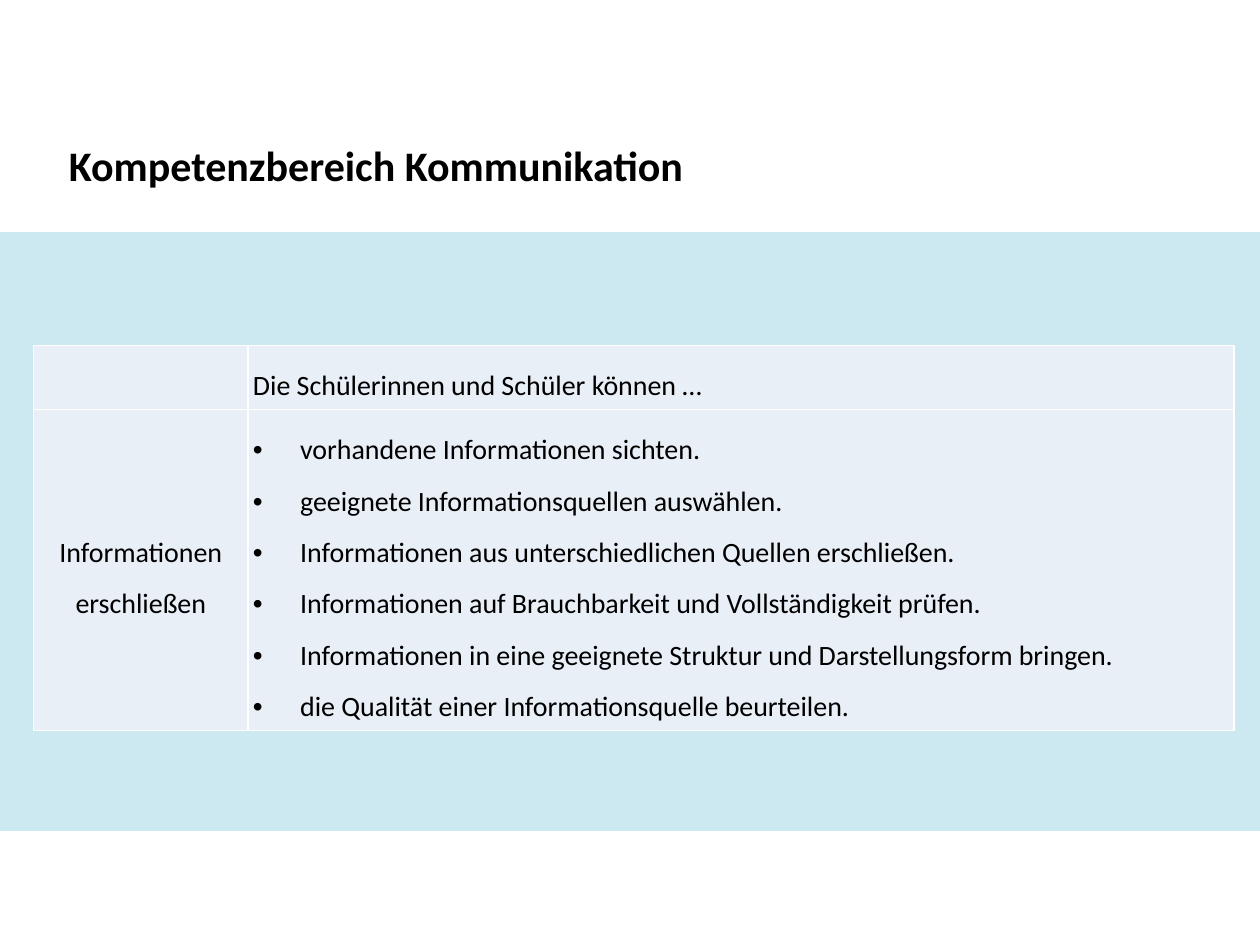
import pptx
import pptx.util
import pptx.dml.color
import pptx.enum.shapes
import pptx.enum.text
import pptx.oxml
import pptx.oxml.ns
from lxml import etree

Cm, Pt = pptx.util.Cm, pptx.util.Pt
RGB = pptx.dml.color.RGBColor.from_string
qn = pptx.oxml.ns.qn
MID = pptx.enum.text.MSO_ANCHOR.MIDDLE
COLORS = {"band": "CCE9F2", "cell": "E9EFF7", "line": "FFFFFF", "text": "000000"}


def add(parent, tag, **attrs):
    return etree.SubElement(parent, qn(tag), attrs)


def style(para, size, bold=False):
    font = para.font
    font.name, font.size, font.bold = "Calibri", Pt(size), bold
    font.color.rgb = RGB(COLORS["text"])


deck = pptx.Presentation()
deck.slide_width, deck.slide_height = Cm(25.4), Cm(19.05)
slide = deck.slides.add_slide(deck.slide_layouts[6])

# Background band
band = slide.shapes.add_shape(pptx.enum.shapes.MSO_SHAPE.RECTANGLE,
                              Cm(0), Cm(4.68), Cm(25.4), Cm(12.07))
band.shadow.inherit = False
band.fill.solid()
band.fill.fore_color.rgb = RGB(COLORS["band"])
band.line.fill.background()

# Table grid
frame = slide.shapes.add_table(2, 2, Cm(0.68), Cm(6.96), Cm(24.2), Cm(6.6))
table = frame.table
table.first_row = table.horz_banding = False
for col, width in zip(table.columns, (4.32, 19.88)):
    col.width = Cm(width)
for row, height in zip(table.rows, (1.27, 5.33)):
    row.height = Cm(height)

# Cell margins, borders and fill
for cell in table.iter_cells():
    cell.margin_left = cell.margin_right = Cm(0.1)
    cell.margin_top = cell.margin_bottom = Cm(0.13)
    props = cell._tc.get_or_add_tcPr()
    for side in ("L", "R", "T", "B"):
        edge = add(props, "a:ln" + side, w=str(Pt(0.96)))
        add(add(edge, "a:solidFill"), "a:srgbClr", val=COLORS["line"])
    cell.fill.solid()
    cell.fill.fore_color.rgb = RGB(COLORS["cell"])

# Heading and topic cells
head, topic = table.cell(0, 1), table.cell(1, 0)
head.text = "Die Schülerinnen und Schüler können …"
topic.text = "Informationen erschließen"
for cell in (head, topic):
    cell.vertical_anchor = MID
    para = cell.text_frame.paragraphs[0]
    para.line_spacing = 1.5
    style(para, 16)
para = topic.text_frame.paragraphs[0]
para.alignment = pptx.enum.text.PP_ALIGN.CENTER
para.space_after = Pt(6)

# Bulleted skills
skills = table.cell(1, 1)
skills.text = "\n".join((
    "vorhandene Informationen sichten.",
    "geeignete Informationsquellen auswählen.",
    "Informationen aus unterschiedlichen Quellen erschließen.",
    "Informationen auf Brauchbarkeit und Vollständigkeit prüfen.",
    "Informationen in eine geeignete Struktur und Darstellungsform bringen.",
    "die Qualität einer Informationsquelle beurteilen.",
))
for para in skills.text_frame.paragraphs:
    para.line_spacing = 1.5
    props = para._p.get_or_add_pPr()
    props.set("marL", str(Cm(0.95)))
    props.set("indent", str(-Cm(0.95)))
    add(add(props, "a:buClr"), "a:srgbClr", val=COLORS["text"])
    add(props, "a:buFont", typeface="Arial")
    add(props, "a:buChar", char="•")
    style(para, 16)

# Title
title = slide.shapes.add_textbox(Cm(1.14), Cm(2.69), Cm(13), Cm(1.27)).text_frame
title.word_wrap = False
title.auto_size = pptx.enum.text.MSO_AUTO_SIZE.SHAPE_TO_FIT_TEXT
title.vertical_anchor = MID
title.text = "Kompetenzbereich Kommunikation"
style(title.paragraphs[0], 24, True)

deck.save("out.pptx")
